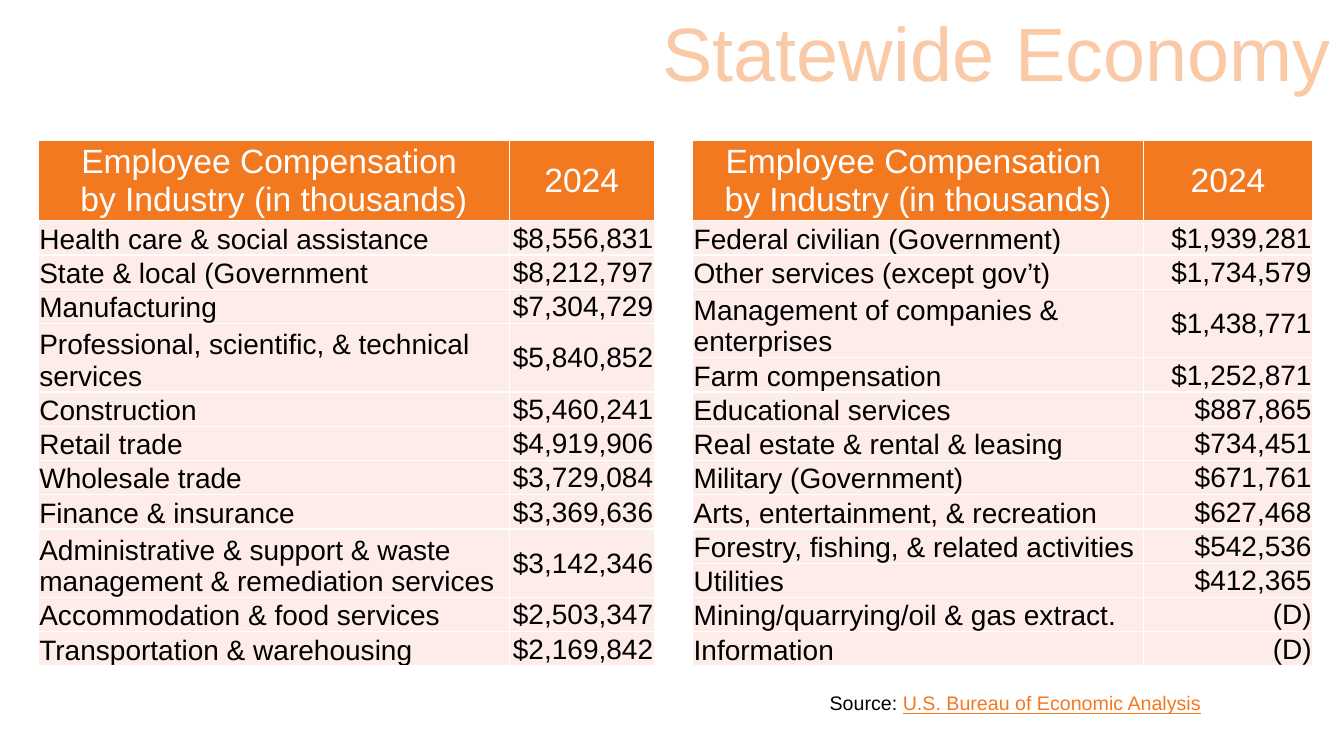
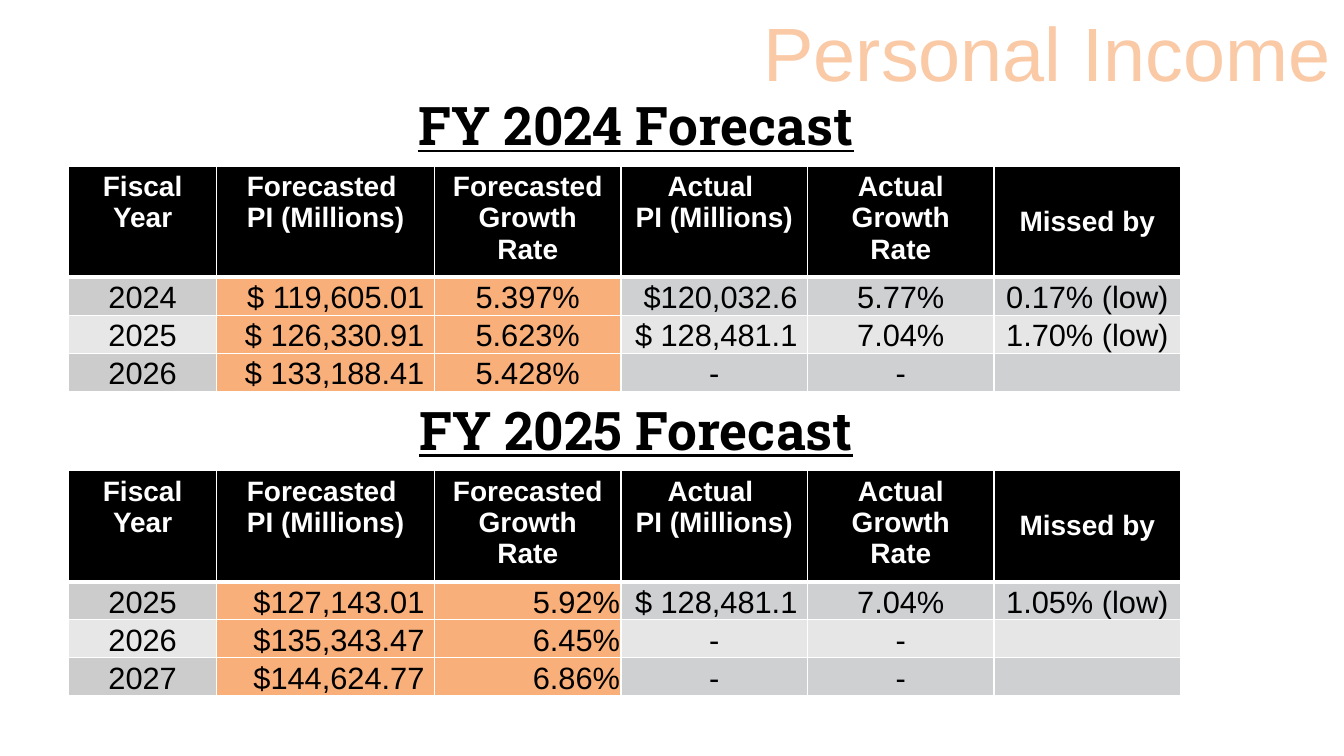
import pptx
import pptx.util
import pptx.dml.color
import pptx.enum.text
import pptx.oxml
import lxml.etree
from pptx.oxml import ns

Inches = pptx.util.Inches
ALIGN = pptx.enum.text.PP_ALIGN
ANCHOR = pptx.enum.text.MSO_ANCHOR

# Content: industries in two tables, each with the rows that take two lines
PAY_HEAD = ("Employee Compensation \nby Industry (in thousands)", "2024")
PAY = [
    {"left": 0.38, "cols": (4.67, 1.44), "double": (4, 9), "rows": [
        ("Health care & social assistance", "$8,556,831"),
        ("State & local (Government", "$8,212,797"),
        ("Manufacturing", "$7,304,729"),
        ("Professional, scientific, & technical services", "$5,840,852"),
        ("Construction", "$5,460,241"),
        ("Retail trade", "$4,919,906"),
        ("Wholesale trade", "$3,729,084"),
        ("Finance & insurance", "$3,369,636"),
        ("Administrative & support & waste management & remediation services",
         "$3,142,346"),
        ("Accommodation & food services", "$2,503,347"),
        ("Transportation & warehousing", "$2,169,842"),
    ]},
    {"left": 6.87, "cols": (4.47, 1.68), "double": (3,), "rows": [
        ("Federal civilian (Government)", "$1,939,281"),
        ("Other services (except gov’t)", "$1,734,579"),
        ("Management of companies & enterprises", "$1,438,771"),
        ("Farm compensation", "$1,252,871"),
        ("Educational services", "$887,865"),
        ("Real estate & rental & leasing", "$734,451"),
        ("Military (Government)", "$671,761"),
        ("Arts, entertainment, & recreation", "$627,468"),
        ("Forestry, fishing, & related activities", "$542,536"),
        ("Utilities", "$412,365"),
        ("Mining/quarrying/oil & gas extract.", "(D)"),
        ("Information", "(D)"),
    ]},
]
SOURCE = ("Source: ", "U.S. Bureau of Economic Analysis")

CAST_HEAD = ("Fiscal\nYear", "Forecasted \nPI (Millions)", "Forecasted\nGrowth Rate",
             "Actual \nPI (Millions)", "Actual Growth Rate", "Missed by")
CASTS = [
    {"name": "FY 2024 Forecast", "top": 0.94, "rate": ALIGN.CENTER, "rows": [
        ("2024", "$ 119,605.01", "5.397%", "$120,032.6", "5.77%", "0.17% (low)"),
        ("2025", "$ 126,330.91", "5.623%", "$ 128,481.1", "7.04%", "1.70% (low)"),
        ("2026", "$ 133,188.41", "5.428%", "-", "-", ""),
    ]},
    {"name": "FY 2025 Forecast", "top": 3.96, "rate": ALIGN.RIGHT, "rows": [
        ("2025", "$127,143.01", "5.92%", "$ 128,481.1", "7.04%", "1.05% (low)"),
        ("2026", "$135,343.47", "6.45%", "-", "-", ""),
        ("2027", "$144,624.77", "6.86%", "-", "-", ""),
    ]},
]


class Theme:
    body, slab = "Arial", "Roboto Slab"
    black, white = "000000", "FFFFFF"
    peach, orange, blush = "FAC9A6", "F37920", "FDECE8"
    amber = "F8AF79"
    years = ("CCCCCC", "E7E7E7")
    grays = ("CED0D2", "E6E6E6")
    title, head, label, cell, figure, note = 54, 38, 20, 20, 22, 14
    pay_head = 24
    thin, thick = 1, 3


# Shared helpers
def style(frame, size, color, font=Theme.body, align=None, bold=False, line=False):
    for par in frame.paragraphs:
        par.alignment = align
        for run in par.runs:
            face = run.font
            face.name, face.size = font, pptx.util.Pt(size)
            face.bold, face.underline = bold, line
            face.color.rgb = pptx.dml.color.RGBColor.from_string(color)


def edge(cell, side, width):
    line = lxml.etree.SubElement(cell._tc.get_or_add_tcPr(), ns.qn("a:ln" + side),
                                 w=str(pptx.util.Pt(width)))
    fill = lxml.etree.SubElement(line, ns.qn("a:solidFill"))
    lxml.etree.SubElement(fill, ns.qn("a:srgbClr"), val=Theme.white)


def paint(cell, text, fill, anchor, top=Theme.thin, base=Theme.thin, pad=None):
    """Fill one cell; pad is the right inset of a tight cell."""
    cell.text_frame.text = text
    cell.vertical_anchor = anchor
    if pad is not None:
        cell.margin_left = cell.margin_top = Inches(0.01)
        cell.margin_right, cell.margin_bottom = Inches(pad), 0
    for side, width in zip("LRTB", (Theme.thin, Theme.thin, top, base)):
        edge(cell, side, width)
    cell.fill.solid()
    cell.fill.fore_color.rgb = pptx.dml.color.RGBColor.from_string(fill)


def grid(slide, left, top, cols, rows):
    table = slide.shapes.add_table(
        len(rows), len(cols), Inches(left), Inches(top),
        Inches(sum(cols)), Inches(sum(rows))).table
    table.horz_banding = False
    for col, width in zip(table.columns, cols):
        col.width = Inches(width)
    for row, height in zip(table.rows, rows):
        row.height = Inches(height)
    return table


def start(deck, text):
    """Add a slide with the large pale title at the top right."""
    slide = deck.slides.add_slide(deck.slide_layouts[5])
    title = slide.shapes.title
    title.left, title.top = Inches(5.33), 0
    title.width, title.height = Inches(8), Inches(1.01)
    frame = title.text_frame
    frame.text = text
    frame.auto_size = pptx.enum.text.MSO_AUTO_SIZE.NONE
    frame.vertical_anchor = ANCHOR.MIDDLE
    frame.margin_right = Inches(0.13)
    style(frame, Theme.title, Theme.peach, align=ALIGN.RIGHT)
    return slide


def box(slide, left, top, width, height):
    frame = slide.shapes.add_textbox(
        Inches(left), Inches(top), Inches(width), Inches(height)).text_frame
    frame.word_wrap = True
    return frame


# Compensation table
def pay(slide, part):
    rows = part["rows"]
    heights = [0.68 if num in part["double"] else 0.34
               for num in range(1, len(rows) + 1)]
    table = grid(slide, part["left"], 1.39, part["cols"],
                 [5.22 - sum(heights)] + heights)
    table.first_row = False
    for col, text in enumerate(PAY_HEAD):
        cell = table.cell(0, col)
        paint(cell, text, Theme.orange, ANCHOR.MIDDLE, pad=0.01)
        style(cell.text_frame, Theme.pay_head, Theme.white, align=ALIGN.CENTER)
    looks = ((ANCHOR.BOTTOM, ALIGN.LEFT), (ANCHOR.MIDDLE, ALIGN.RIGHT))
    for num, row in enumerate(rows, 1):
        for col, (text, (anchor, align)) in enumerate(zip(row, looks)):
            cell = table.cell(num, col)
            paint(cell, text, Theme.blush, anchor, pad=0.01)
            style(cell.text_frame, Theme.cell, Theme.black, align=align)


# Forecast heading and table
def cast(slide, part):
    frame = box(slide, 0.56, part["top"], 11.5, 1.2)
    frame.text = part["name"]
    frame.paragraphs[0].line_spacing = 0.9
    style(frame, Theme.head, Theme.black, Theme.slab, ALIGN.CENTER, True, True)

    rows = part["rows"]
    table = grid(slide, 0.68, part["top"] + 0.71, [1.47, 2.16] + [1.85] * 4,
                 [1.03] + [0.35] * len(rows))
    last = len(CAST_HEAD) - 1
    for col, text in enumerate(CAST_HEAD):
        cell = table.cell(0, col)
        paint(cell, text, Theme.black, ANCHOR.MIDDLE if col == last else ANCHOR.TOP,
              base=Theme.thick)
        style(cell.text_frame, Theme.label, Theme.white, align=ALIGN.CENTER, bold=True)
    for num, row in enumerate(rows, 1):
        band = (num - 1) % 2
        fills = [Theme.years[band]] + [Theme.amber] * 2 + [Theme.grays[band]] * 3
        for col, (text, fill) in enumerate(zip(row, fills)):
            money = text.startswith("$")
            align = ALIGN.RIGHT if money else part["rate"] if col == 2 else ALIGN.CENTER
            cell = table.cell(num, col)
            paint(cell, text, fill, ANCHOR.BOTTOM, pad=0.1 if money else 0.01,
                  top=Theme.thick if num == 1 else Theme.thin)
            style(cell.text_frame, Theme.figure, Theme.black, align=align)


def main():
    deck = pptx.Presentation()
    deck.slide_width, deck.slide_height = Inches(13.33), Inches(7.5)

    # Statewide economy
    slide = start(deck, "Statewide Economy")
    for part in PAY:
        pay(slide, part)
    note = box(slide, 8.13, 6.81, 5.1, 0.34)
    for text in SOURCE:
        note.paragraphs[0].add_run().text = text
    style(note, Theme.note, Theme.black)
    link = note.paragraphs[0].runs[1].font
    link.underline = True
    link.color.rgb = pptx.dml.color.RGBColor.from_string(Theme.orange)

    # Personal income
    slide = start(deck, "Personal Income")
    for part in CASTS:
        cast(slide, part)

    deck.save("out.pptx")


if __name__ == "__main__":
    main()
